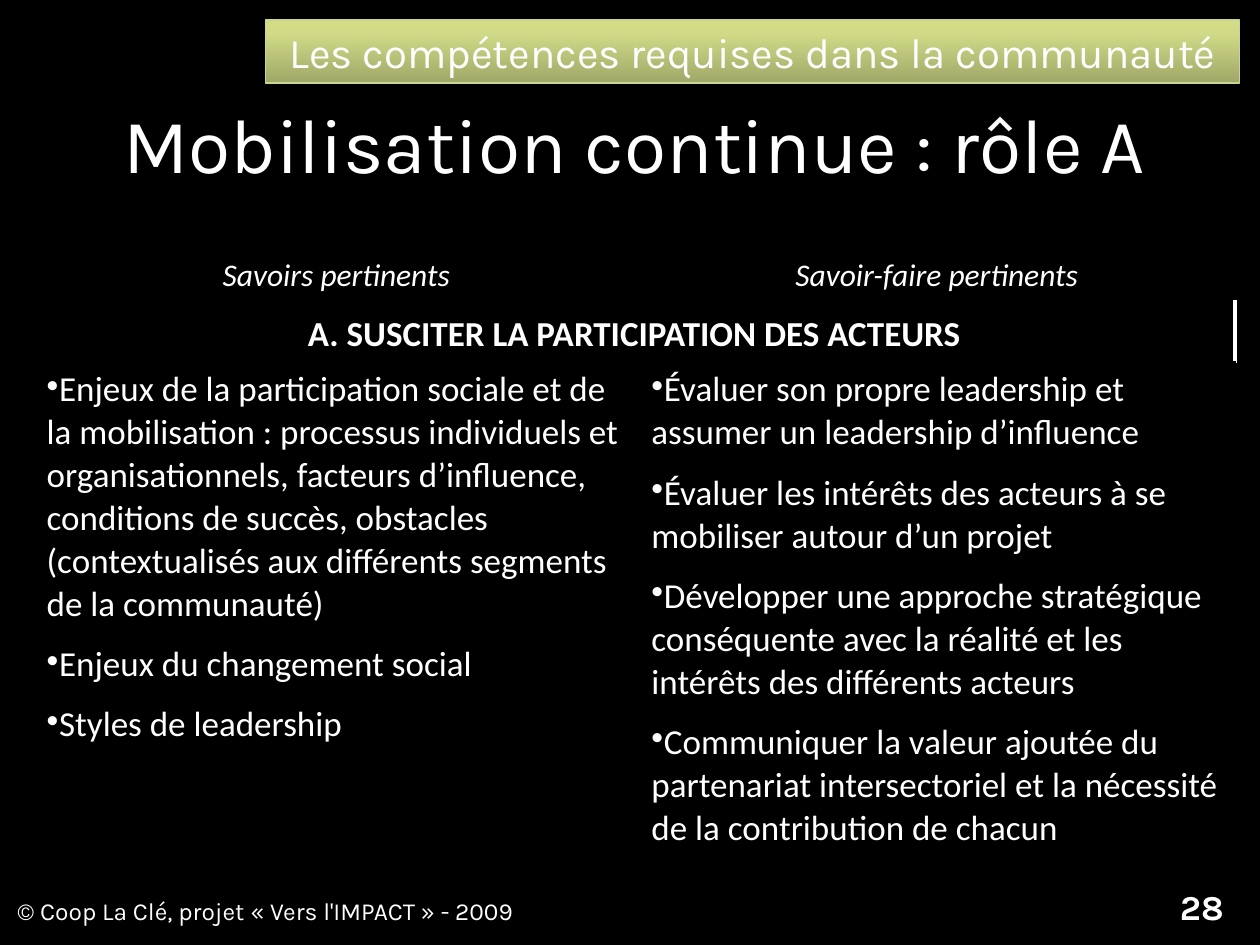
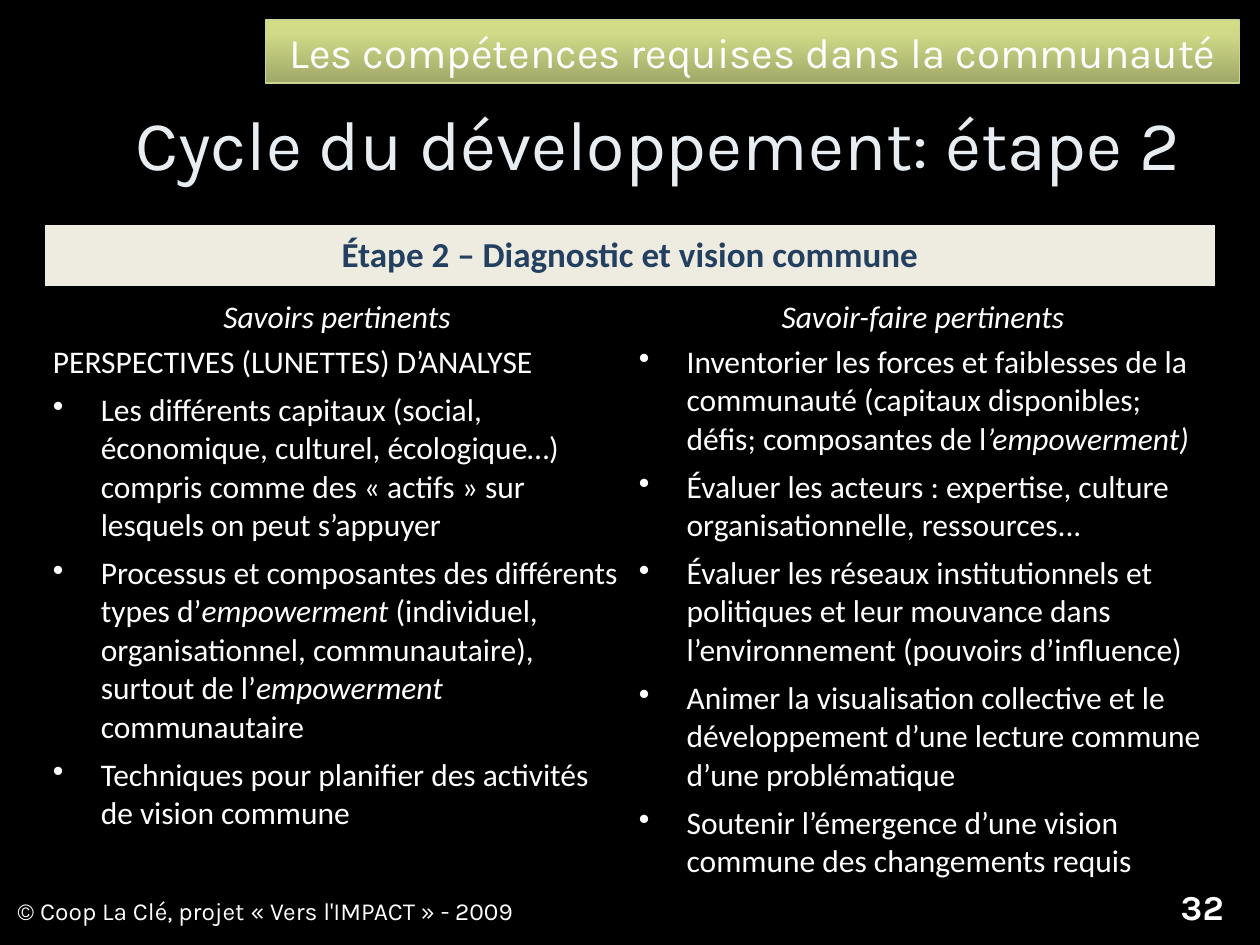
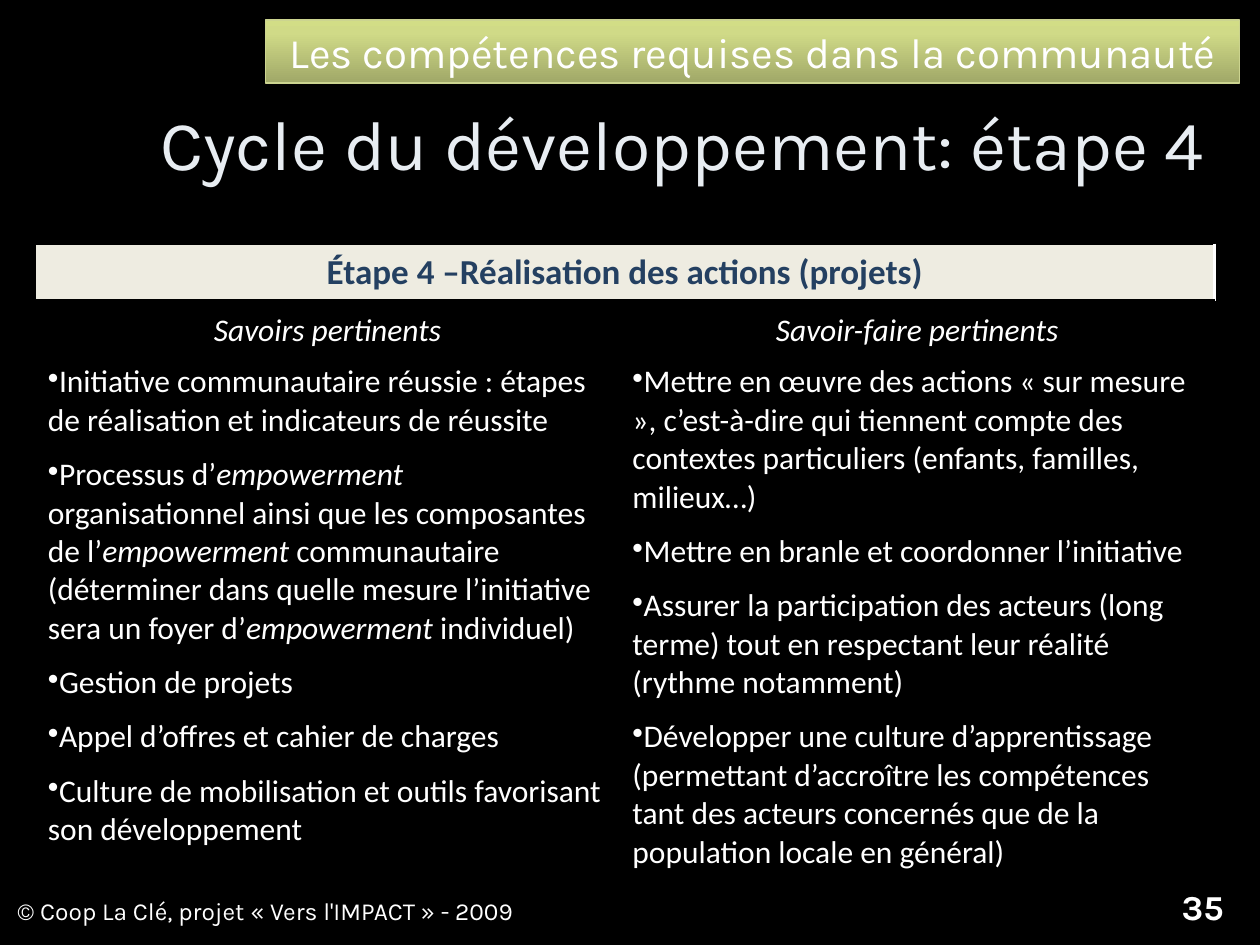
from copy import deepcopy

from lxml.etree import SubElement
from pptx import Presentation
from pptx.dml.color import RGBColor
from pptx.enum.shapes import MSO_SHAPE
from pptx.enum.text import MSO_ANCHOR, MSO_AUTO_SIZE, PP_ALIGN
from pptx.oxml.ns import qn
from pptx.util import Inches, Pt

WHITE, BLACK, PALE = "FFFFFF", "000000", "E8EDF2"
NAVY, CREAM, BAND_LINE = "244061", "EEECE1", "CCD490"
BAND_STOPS = ((0, "A0A868"), (0.8, "D0DA87"), (1, "D2DD86"))
HEADING_FONT, TABLE_FONT = "Karla", "Calibri"
BAND_TEXT = "Les compétences requises dans la communauté"
COPYRIGHT = "© Coop La Clé, projet « Vers l'IMPACT » - 2009"
COLUMN_HEADS = ("Savoirs pertinents", "Savoir-faire pertinents")


def color(hex_value):
    return RGBColor.from_string(hex_value)


class Deck:
    """Holds the style and the current slide; lengths are percentages of the slide."""

    def __init__(self):
        self.presentation = Presentation()
        self.presentation.slide_width = Inches(10)
        self.presentation.slide_height = Inches(7.5)
        self.slide = None

    def across(self, share):
        return round(self.presentation.slide_width * share / 100)

    def down(self, share):
        return round(self.presentation.slide_height * share / 100)

    def area(self, left, top, width, height):
        return self.across(left), self.down(top), self.across(width), self.down(height)

    def style(self, paragraph, size, hex_value=WHITE, name=HEADING_FONT,
              align=PP_ALIGN.LEFT, bold=False, italic=False):
        paragraph.alignment = align
        font = paragraph.font
        font.size, font.name, font.bold, font.italic = Pt(size), name, bold, italic
        font.color.rgb = color(hex_value)

    def new_slide(self, title, width, number, size=40, hex_value=PALE):
        self.slide = self.presentation.slides.add_slide(self.presentation.slide_layouts[5])
        background = self.slide.background.fill
        background.solid()
        background.fore_color.rgb = color(BLACK)
        self.text(COPYRIGHT, (0.4, 94.13, 78.7, 6.93), 14)
        self.text(str(number), (90.2, 93.07, 7.9, 6.93), 20, align=PP_ALIGN.RIGHT, bold=True)
        self.title(title, width, size, hex_value)
        self.band()

    def text(self, words, place, size, **options):
        frame = self.slide.shapes.add_textbox(*self.area(*place)).text_frame
        frame.word_wrap = True
        frame.text = words
        self.style(frame.paragraphs[0], size, **options)

    def title(self, words, width, size, hex_value):
        shape = self.slide.shapes.title
        shape.left, shape.top, shape.width, shape.height = self.area(8.3, 7.33, width, 15.6)
        frame = shape.text_frame
        frame.text = words
        frame.auto_size = MSO_AUTO_SIZE.NONE
        frame.vertical_anchor = MSO_ANCHOR.MIDDLE
        self.style(frame.paragraphs[0], size, hex_value, align=PP_ALIGN.CENTER)

    def band(self):
        shape = self.slide.shapes.add_shape(MSO_SHAPE.RECTANGLE, *self.area(21.1, 2.13, 77.3, 6.67))
        shape.shadow.inherit = False
        shape.line.color.rgb = color(BAND_LINE)
        shape.line.width = Pt(0.75)
        shape.fill.gradient()
        shape.fill.gradient_angle = 90
        stop_list = shape._element.spPr.find(qn("a:gradFill")).find(qn("a:gsLst"))
        stop_list.append(deepcopy(stop_list[0]))
        for stop, (position, hex_value) in zip(shape.fill.gradient_stops, BAND_STOPS):
            stop.position = position
            stop.color.rgb = color(hex_value)
        shape.text_frame.text = BAND_TEXT
        shape.text_frame.vertical_anchor = MSO_ANCHOR.MIDDLE
        self.style(shape.text_frame.paragraphs[0], 24, align=PP_ALIGN.CENTER)

    def table(self, left, top, columns, rows):
        place = self.area(left, top, sum(columns), sum(rows))
        table = self.slide.shapes.add_table(len(rows), len(columns), *place).table
        table.first_row = table.horz_banding = False
        for column, share in zip(table.columns, columns):
            column.width = self.across(share)
        for row, share in zip(table.rows, rows):
            row.height = self.down(share)
        for cell in table.iter_cells():
            for side in ("L", "R", "T", "B"):
                self.border(cell, side, BLACK, 1)
            cell.fill.background()
        return table

    def border(self, cell, side, hex_value, width):
        properties = cell._tc.get_or_add_tcPr()
        tag = qn(f"a:ln{side}")
        line = properties.find(tag)
        if line is None:
            line = SubElement(properties, tag)
        for child in list(line):
            line.remove(child)
        line.set("w", str(Pt(width)))
        SubElement(SubElement(line, qn("a:solidFill")), qn("a:srgbClr")).set("val", hex_value)

    def pad(self, cell, horizontal, vertical):
        cell.margin_left = cell.margin_right = self.across(horizontal)
        cell.margin_top = cell.margin_bottom = self.down(vertical)

    def section(self, table, row, words, hex_value=WHITE, fill=None, edge=True, spacing=1.0):
        """Writes a bold heading across both columns of a row."""
        first, last = table.cell(row, 0), table.cell(row, 1)
        first.merge(last)
        if fill:
            first.fill.solid()
            first.fill.fore_color.rgb = color(fill)
        if edge:
            for cell in (first, last):
                self.border(cell, "R", WHITE, 2.25)
        first.text = words
        paragraph = first.text_frame.paragraphs[0]
        paragraph.line_spacing = spacing
        self.style(paragraph, 20, hex_value, TABLE_FONT, PP_ALIGN.CENTER, bold=True)

    def column_heads(self, table, row):
        for column, words in enumerate(COLUMN_HEADS):
            cell = table.cell(row, column)
            cell.text = words
            paragraph = cell.text_frame.paragraphs[0]
            paragraph.line_spacing = 1.15
            self.style(paragraph, 18, name=TABLE_FONT, align=PP_ALIGN.CENTER, italic=True)

    def bullets(self, cell, items, size=18, gap=0.5, indent=0.0, lead=None):
        """Lists the items; words between underscores are italic, lead has no bullet."""
        frame = cell.text_frame
        for index, item in enumerate(([lead] if lead else []) + items):
            paragraph = frame.add_paragraph() if index else frame.paragraphs[0]
            properties = paragraph._p.get_or_add_pPr()
            properties.set("marL", str(self.across(indent)))
            properties.set("indent", str(-self.across(indent)))
            if item == lead:
                SubElement(properties, qn("a:buNone"))
            else:
                SubElement(properties, qn("a:buChar")).set("char", "•")
            if index:
                paragraph.space_before = Pt(size * gap)
            self.style(paragraph, size, name=TABLE_FONT)
            for part, words in enumerate(item.split("_")):
                if words:
                    run = paragraph.add_run()
                    run.text = words
                    if part % 2:
                        run.font.italic = True


def mobilisation_slide(deck):
    deck.new_slide("Mobilisation continue : rôle A", 84.2, 28, 44, WHITE)
    table = deck.table(2.7, 25.87, (48, 47.3), (5.87, 6.53, 53.73))
    deck.column_heads(table, 0)
    deck.section(table, 1, "A. SUSCITER LA PARTICIPATION DES ACTEURS", spacing=1.15)
    deck.bullets(table.cell(2, 0), [
        "Enjeux de la participation sociale et de la mobilisation : processus individuels et "
        "organisationnels, facteurs d’influence, conditions de succès, obstacles "
        "(contextualisés aux différents segments de la communauté)",
        "Enjeux du changement social",
        "Styles de leadership",
    ], size=20)
    deck.bullets(table.cell(2, 1), [
        "Évaluer son propre leadership et assumer un leadership d’influence",
        "Évaluer les intérêts des acteurs à se mobiliser autour d’un projet",
        "Développer une approche stratégique conséquente avec la réalité et les intérêts "
        "des différents acteurs",
        "Communiquer la valeur ajoutée du partenariat intersectoriel et la nécessité "
        "de la contribution de chacun",
    ], size=20)


def diagnostic_slide(deck):
    deck.new_slide("Cycle du développement: étape 2", 87.8, 32)
    table = deck.table(3.5, 23.73, (46.5, 46.5), (6.6, 6, 56.67))
    deck.section(table, 0, "Étape 2 – Diagnostic et vision commune", NAVY, CREAM, edge=False)
    deck.pad(table.cell(0, 0), 0.7, 1.07)
    deck.column_heads(table, 1)
    for column in range(2):
        deck.pad(table.cell(2, column), 0.7, 0)
    deck.bullets(table.cell(2, 0), [
        "Les différents capitaux (social, économique, culturel, écologique…) compris comme "
        "des « actifs » sur lesquels on peut s’appuyer",
        "Processus et composantes des différents types d’_empowerment_ (individuel, "
        "organisationnel, communautaire), surtout de l’_empowerment_ communautaire",
        "Techniques pour planifier des activités de vision commune",
    ], gap=0.3, indent=3.8, lead="PERSPECTIVES (LUNETTES) D’ANALYSE")
    deck.bullets(table.cell(2, 1), [
        "Inventorier les forces et faiblesses de la communauté (capitaux disponibles; défis; "
        "composantes de l_’empowerment)_",
        "Évaluer les acteurs : expertise, culture organisationnelle, ressources...",
        "Évaluer les réseaux institutionnels et politiques et leur mouvance dans "
        "l’environnement (pouvoirs d’influence)",
        "Animer la visualisation collective et le développement d’une lecture commune "
        "d’une problématique",
        "Soutenir l’émergence d’une vision commune des changements requis",
    ], gap=0.3, indent=3.8)


def actions_slide(deck):
    deck.new_slide("Cycle du développement: étape 4", 91.7, 35)
    table = deck.table(2.8, 25.87, (46.4, 47.2), (5.87, 6, 56.67))
    deck.section(table, 0, "Étape 4 –Réalisation des actions (projets)", NAVY, CREAM)
    deck.column_heads(table, 1)
    deck.bullets(table.cell(2, 0), [
        "Initiative communautaire réussie : étapes de réalisation et indicateurs de réussite",
        "Processus d’_empowerment_ organisationnel ainsi que les composantes de "
        "l’_empowerment_ communautaire (déterminer dans quelle mesure l’initiative sera "
        "un foyer d’_empowerment_ individuel)",
        "Gestion de projets",
        "Appel d’offres et cahier de charges",
        "Culture de mobilisation et outils favorisant son développement",
    ])
    deck.bullets(table.cell(2, 1), [
        "Mettre en œuvre des actions « sur mesure », c’est-à-dire qui tiennent compte "
        "des contextes particuliers (enfants, familles, milieux…)",
        "Mettre en branle et coordonner l’initiative",
        "Assurer la participation des acteurs (long terme) tout en respectant leur réalité "
        "(rythme notamment)",
        "Développer une culture d’apprentissage (permettant d’accroître les compétences tant "
        "des acteurs concernés que de la population locale en général)",
    ])


def main():
    deck = Deck()
    mobilisation_slide(deck)
    diagnostic_slide(deck)
    actions_slide(deck)
    deck.presentation.save("out.pptx")


if __name__ == "__main__":
    main()
